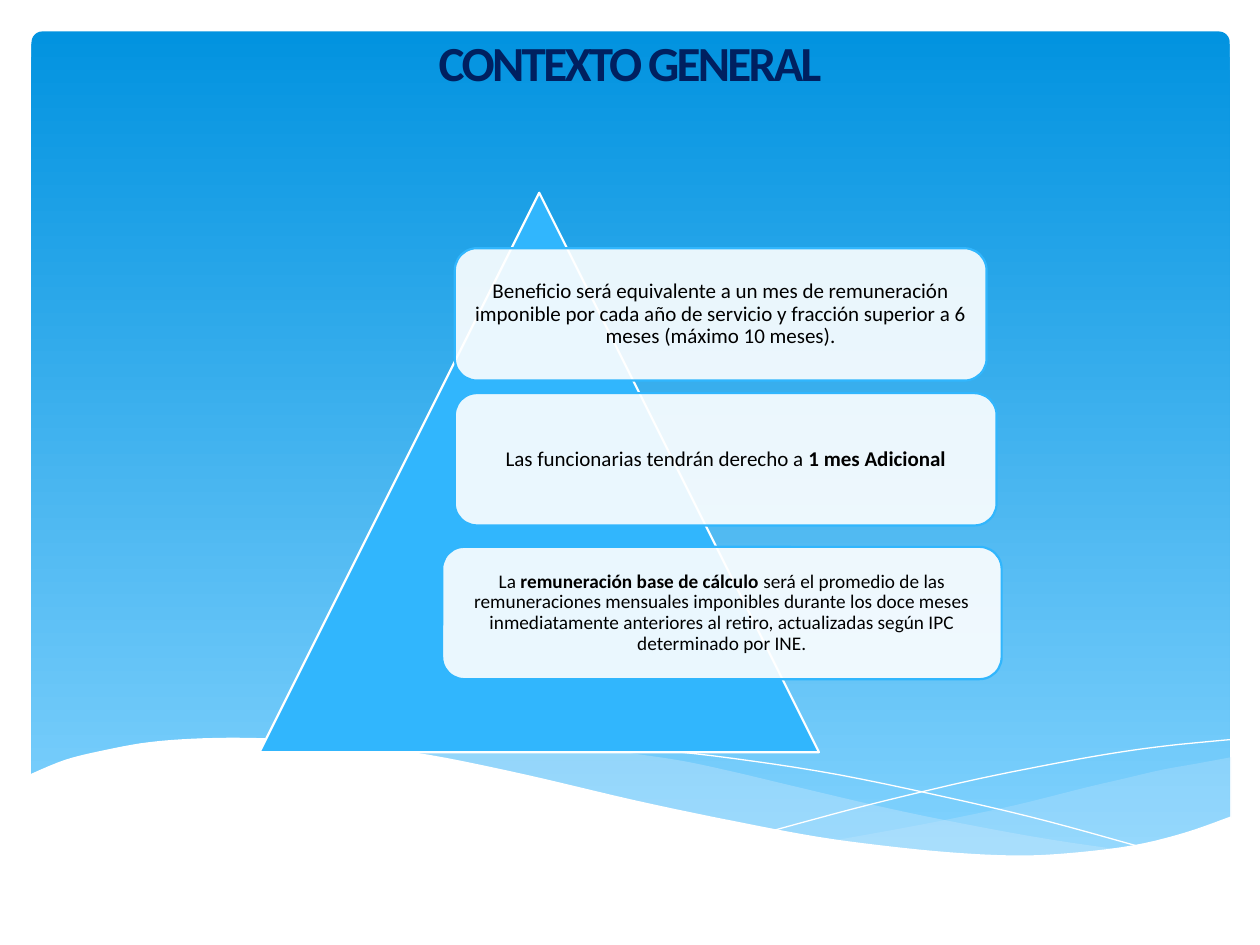
from lxml.etree import SubElement
from pptx import Presentation
from pptx.dml.color import RGBColor as Rgb
from pptx.enum.shapes import MSO_SHAPE as Shape
from pptx.enum.text import MSO_ANCHOR as Anchor, MSO_AUTO_SIZE as Fit, PP_ALIGN as Align
from pptx.oxml.ns import qn
from pptx.util import Inches, Pt

WHITE, BLACK = Rgb(255, 255, 255), Rgb(0, 0, 0)
NAVY, BLUE = Rgb(0x00, 0x20, 0x60), Rgb(0x31, 0xB6, 0xFD)
SKY, PALE = Rgb(0x02, 0x93, 0xE0), Rgb(0x83, 0xD3, 0xFE)
FOAM = Rgb(0xC6, 0xE7, 0xFC)
FONT = "Calibri"
WIDE, HIGH = Inches(10), Inches(7.5)
COL, ROW = WIDE / 100, HIGH / 75  # grid of 100 columns by 75 rows

# Knots of each wave edge, in columns and rows
RIGHT_TOP = [(97.7, 60.1), (95, 60.6), (92.2, 61.1), (89.2, 61.8), (86.2, 62.5),
             (80.6, 63.9), (75.4, 65), (70.7, 65.9), (66.2, 66.7)]
RIGHT_LOW = [(66.2, 66.7), (70.6, 67.3), (74.6, 67.7), (78.2, 67.9), (81.5, 68),
             (85.5, 67.8), (89, 67.4), (92.2, 66.7), (95.1, 65.9), (97.7, 64.9)]
MID_TOP = [(89.4, 67.5), (83.8, 66.7), (77.6, 65.6), (70.7, 64.2), (63, 62.4),
           (58.4, 61.3), (54.2, 60.4), (50.2, 59.8), (46.5, 59.3), (42, 58.9),
           (38, 58.7), (34.5, 58.8), (31.4, 59), (28.7, 59.3)]
MID_LOW = [(28.7, 59.3), (32.3, 59.8), (36.3, 60.4), (40.5, 61.3), (45, 62.4),
           (53, 64.2), (60.2, 65.7), (66.6, 66.8), (72.3, 67.6), (77.4, 67.9),
           (81.9, 68), (85.9, 67.9), (89.4, 67.5)]
FALL = [(31, 59.7), (32.9, 59.4), (36.3, 59), (40.2, 58.9), (45.1, 58.9),
        (51.1, 59.4), (58.2, 60.2), (66.6, 61.5), (76.1, 63.5), (83.2, 65.2), (90.8, 67.3)]
RISE = [(61.4, 65.9), (67.3, 64.3), (72.1, 63.1), (77.7, 61.8), (83.7, 60.6),
        (88.2, 59.8), (92.5, 59.2), (97.6, 58.7)]
SHORE = [(97.7, 64.8), (94, 66.1), (89.9, 67.1), (85, 67.7), (80.9, 67.9),
         (76.1, 67.7), (70.8, 67.2), (64.8, 66.4), (57.9, 65.1), (50.3, 63.5),
         (41.8, 61.5), (34, 59.9), (27.1, 59), (21.1, 58.6), (16.1, 58.6),
         (11.9, 58.9), (8.5, 59.5), (5.2, 60.3), (2.3, 61.5)]

CARDS = [  # left, top, width, text size, (text, bold) runs
    (36.1, 19.7, 42.2, 12, [("Beneficio será equivalente a un mes de remuneración imponible "
                             "por cada año de servicio y fracción superior a 6 meses "
                             "(máximo 10 meses).", False)]),
    (36.1, 31.2, 43, 12, [("Las funcionarias tendrán derecho a ", False),
                          ("1 mes Adicional", True)]),
    (35.1, 43.4, 44.4, 11, [("La ", False), ("remuneración base de cálculo ", True),
                            ("será el promedio de las remuneraciones mensuales imponibles "
                             "durante los doce meses inmediatamente anteriores al retiro, "
                             "actualizadas según IPC determinado por INE.", False)]),
]


def smooth(knots, steps=5):
    """Return points of a Catmull-Rom curve through the knots."""
    ends = [knots[0], *knots, knots[-1]]
    points = [knots[0]]
    for quad in zip(ends, ends[1:], ends[2:], ends[3:]):
        for step in range(1, steps + 1):
            t = step / steps
            points.append(tuple(
                b + t * (c - a) / 2 + t * t * (2 * a - 5 * b + 4 * c - d) / 2
                + t ** 3 * (3 * b - a - 3 * c + d) / 2
                for a, b, c, d in zip(*quad)))
    return points


def paint(shape, fill=None, alpha=100, line=None, width=0):
    shape.shadow.inherit = False
    if fill is None:
        shape.fill.background()
    else:
        shape.fill.solid()
        shape.fill.fore_color.rgb = fill
        if alpha < 100:
            color = shape.fill._xPr.find(".//" + qn("a:srgbClr"))
            SubElement(color, qn("a:alpha")).set("val", str(alpha * 1000))
    if line is None:
        shape.line.fill.background()
    else:
        shape.line.color.rgb = line
        shape.line.width = Pt(width)


def add(shapes, kind, left, top, width, height):
    return shapes.add_shape(kind, *(round(n) for n in (
        left * COL, top * ROW, width * COL, height * ROW)))


def trace(shapes, points, close=True):
    """Build an outline from points in columns and rows."""
    spots = [(x * COL, y * ROW) for x, y in points]
    pen = shapes.build_freeform(*spots[0])
    pen.add_line_segments(spots[1:], close=close)
    return pen.convert_to_shape()


def add_sky(shapes):
    sky = add(shapes, Shape.ROUNDED_RECTANGLE, 2.5, 2.5, 95.1, 66)
    sky.adjustments[0] = 0.013
    paint(sky)
    sky.fill.gradient()
    sky.fill.gradient_angle = 270
    for stop, color in zip(sky.fill.gradient_stops, (SKY, PALE)):
        stop.color.rgb = color


def add_waves(shapes):
    for top, low, alpha in ((RIGHT_TOP, RIGHT_LOW, 29), (MID_TOP, MID_LOW, 40)):
        paint(trace(shapes, smooth(top) + smooth(low)), FOAM, alpha)
    for knots in (FALL, RISE):
        paint(trace(shapes, smooth(knots), close=False), line=WHITE)
    paint(trace(shapes, smooth(SHORE) + [(2.3, 73.1), (97.7, 73.1)]), WHITE)


def add_title(shapes, text):
    title = shapes.title
    shapes.element.append(title.element)  # bring in front of the waves
    title.left, title.top = 0, round(2.1 * ROW)
    title.width, title.height = WIDE, round(5.7 * ROW)
    frame = title.text_frame
    frame.text = text
    frame.auto_size = Fit.SHAPE_TO_FIT_TEXT
    frame.vertical_anchor = Anchor.TOP
    para = frame.paragraphs[0]
    para.alignment = Align.CENTER
    font = para.runs[0].font
    font.name, font.size, font.bold = FONT, Pt(28), True
    font.color.rgb = NAVY
    para.runs[0]._r.get_or_add_rPr().set("spc", "-150")


def add_card(shapes, left, top, width, size, runs):
    card = add(shapes, Shape.ROUNDED_RECTANGLE, left, top, width, 10.5)
    paint(card, WHITE, 90, BLUE, 1.25)
    frame = card.text_frame
    frame.word_wrap = True
    frame.vertical_anchor = Anchor.MIDDLE
    frame.margin_left = frame.margin_right = Inches(0.05)
    frame.margin_top = frame.margin_bottom = Inches(0.05)
    para = frame.paragraphs[0]
    para.alignment, para.line_spacing = Align.CENTER, 0.9
    para.font.name, para.font.size = FONT, Pt(size)
    para.font.color.rgb = BLACK
    for text, bold in runs:
        run = para.add_run()
        run.text, run.font.bold = text, bold
        run.font.color.rgb = BLACK


def add_pyramid(shapes):
    peak = add(shapes, Shape.ISOSCELES_TRIANGLE, 20.6, 15.3, 44.4, 44.4)
    paint(peak, BLUE, line=WHITE, width=1.25)
    for card in CARDS:
        add_card(shapes, *card)


def main():
    deck = Presentation()
    deck.slide_width, deck.slide_height = WIDE, HIGH
    shapes = deck.slides.add_slide(deck.slide_layouts[5]).shapes
    add_sky(shapes)
    add_waves(shapes)
    add_title(shapes, "CONTEXTO GENERAL")
    add_pyramid(shapes)
    deck.save("out.pptx")


if __name__ == "__main__":
    main()
